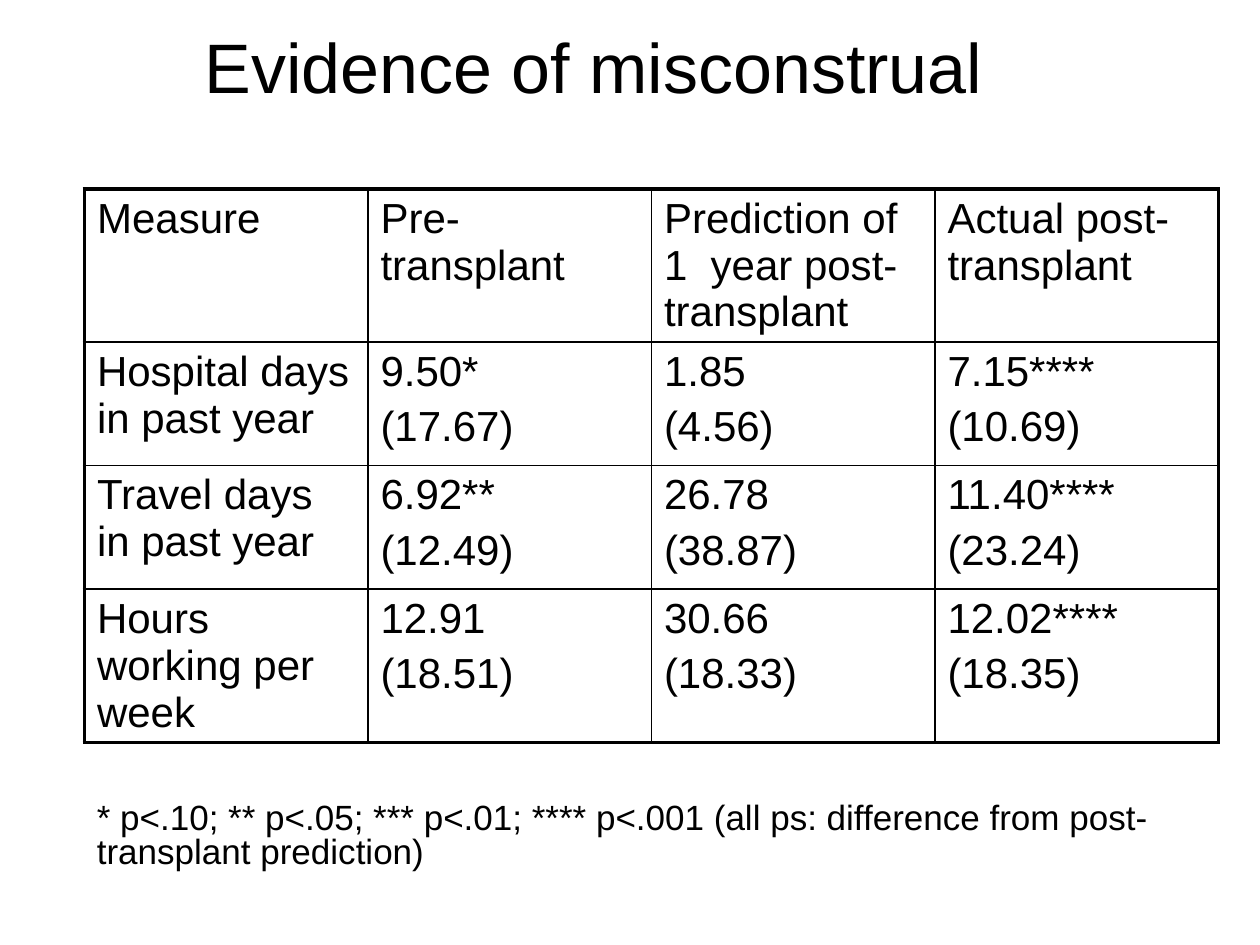
"""Build the slide with the table of transplant predictions and outcomes."""
from dataclasses import dataclass

from lxml.etree import SubElement
from pptx import Presentation
from pptx.dml.color import RGBColor
from pptx.enum.text import MSO_ANCHOR, PP_ALIGN
from pptx.oxml.ns import qn
from pptx.slide import Slide
from pptx.table import _Cell
from pptx.util import Inches, Pt

COLORS = {"ink": "000000", "paper": "FFFFFF"}
LEFT = Inches(0.67)
COLUMN_WIDTH = Inches(2.25)
ROW_HEIGHTS = [Inches(height) for height in (1.21, 0.98, 0.98, 1.21)]
OUTER_LINE, INNER_LINE = Pt(2.25), Pt(1)
MEASURES = [
    ["Measure", "Pre-transplant", "Prediction of 1  year post-transplant",
     "Actual post-transplant"],
    ["Hospital days in past year", "9.50*\n(17.67)", "1.85\n(4.56)", "7.15****\n(10.69)"],
    ["Travel days in past year", "6.92**\n(12.49)", "26.78\n(38.87)", "11.40****\n(23.24)"],
    ["Hours working per week", "12.91\n(18.51)", "30.66\n(18.33)", "12.02****\n(18.35)"],
]


@dataclass(frozen=True)
class Caption:
    """Text placed on the slide outside the table."""

    text: str
    top: float
    width: float
    height: float
    size: int
    anchor: MSO_ANCHOR
    align: PP_ALIGN


CAPTIONS = [
    Caption("* p<.10; ** p<.05; *** p<.01; **** p<.001 "
            "(all ps: difference from post-transplant prediction)",
            6.33, 9.08, 0.77, 20, MSO_ANCHOR.TOP, PP_ALIGN.LEFT),
    Caption("Evidence of misconstrual", 0.25, 8.08, 0.67, 40,
            MSO_ANCHOR.MIDDLE, PP_ALIGN.CENTER),
]


def set_format(target: object, values: dict) -> None:
    """Set each named attribute of the target."""
    for name, value in values.items():
        setattr(target, name, value)


def style_font(font: object, size: int) -> None:
    """Apply the slide's typeface and ink at a point size."""
    set_format(font, {"name": "Arial", "size": Pt(size)})
    font.color.rgb = RGBColor.from_string(COLORS["ink"])


def draw_caption(slide: Slide, caption: Caption) -> None:
    """Add a caption as a wrapped text box."""
    frame = slide.shapes.add_textbox(
        LEFT, Inches(caption.top), Inches(caption.width), Inches(caption.height)
    ).text_frame
    set_format(frame, {"word_wrap": True, "vertical_anchor": caption.anchor,
                       "text": caption.text})
    paragraph = frame.paragraphs[0]
    set_format(paragraph, {"alignment": caption.align, "line_spacing": 0.8})
    style_font(paragraph.runs[0].font, caption.size)


def draw_borders(cell: _Cell, row: int, column: int) -> None:
    """Rule the cell, heavier along the table's outer edge."""
    outer_edges = {
        "a:lnL": column == 0,
        "a:lnR": column == len(MEASURES[0]) - 1,
        "a:lnT": row == 0,
        "a:lnB": row == len(MEASURES) - 1,
    }
    properties = cell._tc.get_or_add_tcPr()
    for position, (tag, outer) in enumerate(outer_edges.items()):
        width = OUTER_LINE if outer else INNER_LINE
        line = SubElement(properties, qn(tag), w=str(int(width)))
        fill = SubElement(line, qn("a:solidFill"))
        SubElement(fill, qn("a:srgbClr"), val=COLORS["ink"])
        properties.insert(position, line)


def draw_measures(slide: Slide) -> None:
    """Add the table of measures."""
    table = slide.shapes.add_table(
        len(MEASURES), len(MEASURES[0]), LEFT, Inches(1.5),
        COLUMN_WIDTH * len(MEASURES[0]), sum(ROW_HEIGHTS)
    ).table
    set_format(table, {"first_row": False, "horz_banding": False})
    for column in table.columns:
        column.width = COLUMN_WIDTH
    for row, height in zip(table.rows, ROW_HEIGHTS):
        row.height = height
    for row_index, entries in enumerate(MEASURES):
        for column_index, entry in enumerate(entries):
            cell = table.cell(row_index, column_index)
            cell.text = entry
            cell.fill.solid()
            cell.fill.fore_color.rgb = RGBColor.from_string(COLORS["paper"])
            draw_borders(cell, row_index, column_index)
            for paragraph in cell.text_frame.paragraphs:
                style_font(paragraph.runs[0].font, 24)
            for paragraph in cell.text_frame.paragraphs[1:]:
                paragraph.space_before = Pt(4.8)


def main() -> None:
    """Build and save the slide."""
    presentation = Presentation()
    set_format(presentation, {"slide_width": Inches(10), "slide_height": Inches(7.5)})
    slide = presentation.slides.add_slide(presentation.slide_layouts[6])
    draw_measures(slide)
    for caption in CAPTIONS:
        draw_caption(slide, caption)
    presentation.save("out.pptx")


if __name__ == "__main__":
    main()
